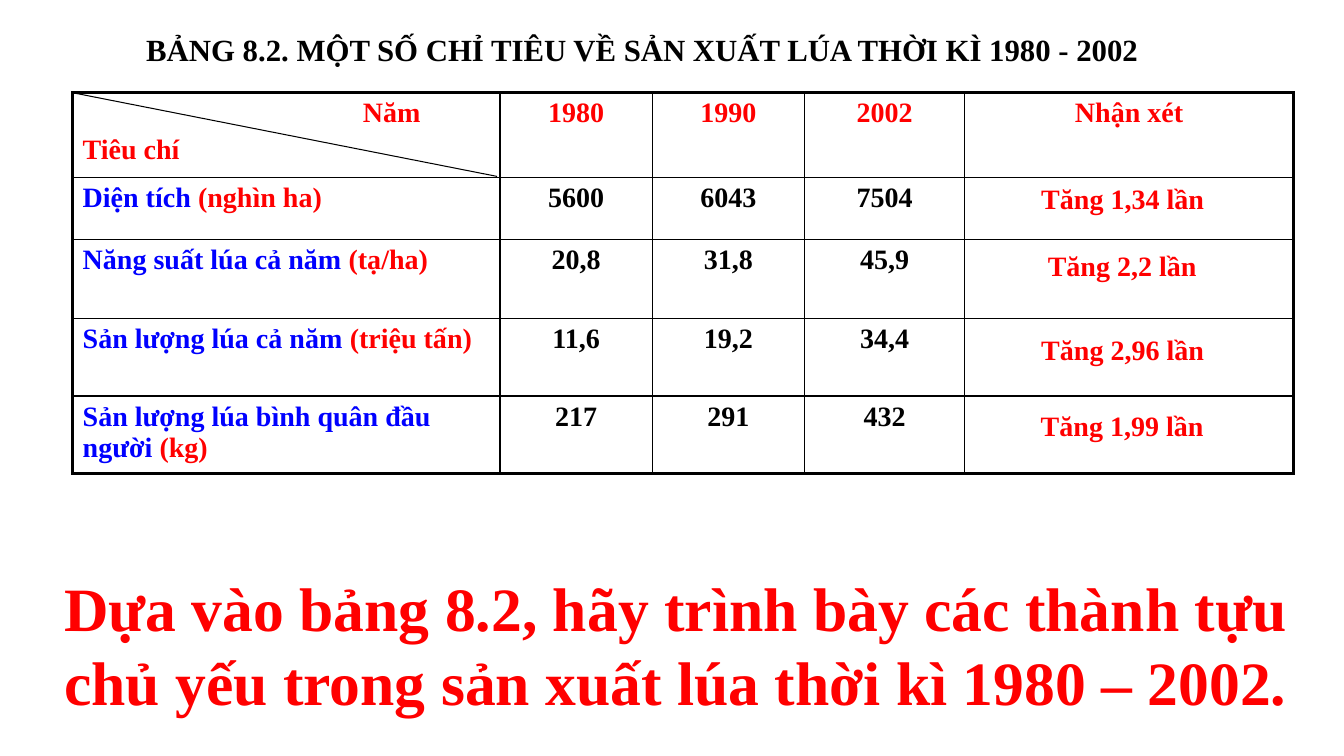
from dataclasses import dataclass
from lxml.etree import SubElement
from pptx import Presentation
from pptx.dml.color import RGBColor
from pptx.enum.shapes import MSO_CONNECTOR, MSO_SHAPE
from pptx.enum.text import MSO_ANCHOR, MSO_AUTO_SIZE, PP_ALIGN
from pptx.oxml import parse_xml
from pptx.oxml.ns import nsdecls, qn
from pptx.util import Inches, Pt


@dataclass(frozen=True)
class Theme:
    font: str = "Times New Roman"
    black: str = "000000"
    blue: str = "0000FF"
    red: str = "FF0000"
    white: str = "FFFFFF"
    body: int = 20
    title: int = 22
    question: int = 44
    thin: float = 1
    thick: float = 2.25


theme = Theme()


def write(p, text, color=theme.red, size=theme.body, align=PP_ALIGN.LEFT):
    p.alignment = align
    r = p.add_run()
    r.text = text
    r.font.name = theme.font
    r.font.size = Pt(size)
    r.font.bold = True
    r.font.color.rgb = RGBColor.from_string(color)


def set_borders(cell, **widths):
    tcPr = cell._tc.get_or_add_tcPr()
    for i, (side, width) in enumerate(widths.items()):
        tcPr.insert(i, parse_xml(
            f'<a:ln{side} {nsdecls("a")} w="{Pt(width)}"><a:solidFill>'
            f'<a:srgbClr val="{theme.black}"/></a:solidFill></a:ln{side}>'))


prs = Presentation()
prs.slide_width, prs.slide_height = Inches(13.33), Inches(7.5)
s = prs.slides.add_slide(prs.slide_layouts[5])

title = s.shapes.title
title.left, title.top, title.width, title.height = (
    Inches(1.35), Inches(0.25), Inches(11.26), Inches(0.47))
tf = title.text_frame
tf.word_wrap = True
tf.auto_size = MSO_AUTO_SIZE.SHAPE_TO_FIT_TEXT
tf.vertical_anchor = MSO_ANCHOR.TOP
write(tf.paragraphs[0], "BẢNG 8.2. MỘT SỐ CHỈ TIÊU VỀ SẢN XUẤT LÚA THỜI KÌ 1980 - 2002",
      color=theme.black, size=theme.title)

left, top = 0.72, 0.92
col_widths = [4.24, 1.51, 1.51, 1.59, 3.26]
row_heights = [0.84, 0.62, 0.78, 0.77, 0.77]
headers = ["1980", "1990", "2002", "Nhận xét"]
indicators = [
    ("Diện tích ", "(nghìn ha)", ["5600", "6043", "7504"]),
    ("Năng suất lúa cả năm ", "(tạ/ha)", ["20,8", "31,8", "45,9"]),
    ("Sản lượng lúa cả năm ", "(triệu tấn)", ["11,6", "19,2", "34,4"]),
    ("Sản lượng lúa bình quân đầu người ", "(kg)", ["217", "291", "432"]),
]
rows, cols = len(row_heights), len(col_widths)
table = s.shapes.add_table(rows, cols, Inches(left), Inches(top),
                           Inches(sum(col_widths)), Inches(sum(row_heights))).table
table.first_row = table.horz_banding = False
for column, width in zip(table.columns, col_widths):
    column.width = Inches(width)
for row, height in zip(table.rows, row_heights):
    row.height = Inches(height)

for i in range(rows):
    for j in range(cols):
        cell = table.cell(i, j)
        cell.fill.background()
        set_borders(cell,
                    L=theme.thick if j == 0 else theme.thin,
                    R=theme.thick if j == cols - 1 else theme.thin,
                    T=theme.thick if i == 0 else theme.thin,
                    B=theme.thick if i == rows - 1 else theme.thin)

tf = table.cell(0, 0).text_frame
p = tf.paragraphs[0]
p._p.get_or_add_pPr().set("marL", str(Inches(2.78)))
write(p, "Năm")
p = tf.add_paragraph()
p.space_before = Pt(4)
write(p, "Tiêu chí")
for j, header in enumerate(headers, 1):
    write(table.cell(0, j).text_frame.paragraphs[0], header, align=PP_ALIGN.CENTER)
for i, (name, unit, values) in enumerate(indicators, 1):
    p = table.cell(i, 0).text_frame.paragraphs[0]
    write(p, name, color=theme.blue)
    write(p, unit)
    for j, value in enumerate(values, 1):
        write(table.cell(i, j).text_frame.paragraphs[0], value,
              color=theme.black, align=PP_ALIGN.CENTER)

diagonal = s.shapes.add_connector(MSO_CONNECTOR.STRAIGHT, Inches(left), Inches(top),
                                  Inches(4.93), Inches(1.75))
diagonal.line.color.rgb = RGBColor.from_string(theme.black)
diagonal.line.width = Pt(0.75)
SubElement(diagonal._element.spPr, qn("a:effectLst"))

remarks = [
    ("Tăng 1,34 lần", 9.94, 1.75, 2.39),
    ("Tăng 2,2 lần", 9.92, 2.42, 2.42),
    ("Tăng 2,96 lần", 9.94, 3.25, 2.39),
    ("Tăng 1,99 lần", 9.92, 4, 2.42),
]
for text, x, y, width in remarks:
    tf = s.shapes.add_textbox(Inches(x), Inches(y), Inches(width), Inches(0.44)).text_frame
    tf.word_wrap = True
    tf.auto_size = MSO_AUTO_SIZE.SHAPE_TO_FIT_TEXT
    write(tf.paragraphs[0], text, align=PP_ALIGN.CENTER)

sp = s.shapes.add_shape(MSO_SHAPE.RECTANGLE, Inches(0.41), Inches(5.59),
                        Inches(12.59), Inches(1.6))
sp.shadow.inherit = False
sp.fill.solid()
sp.fill.fore_color.rgb = RGBColor.from_string(theme.white)
sp.line.fill.background()
tf = sp.text_frame
tf.word_wrap = True
tf.vertical_anchor = MSO_ANCHOR.MIDDLE
write(tf.paragraphs[0],
      "Dựa vào bảng 8.2, hãy trình bày các thành tựu chủ yếu trong sản xuất lúa thời kì 1980 – 2002.",
      size=theme.question, align=PP_ALIGN.CENTER)

prs.save("out.pptx")
